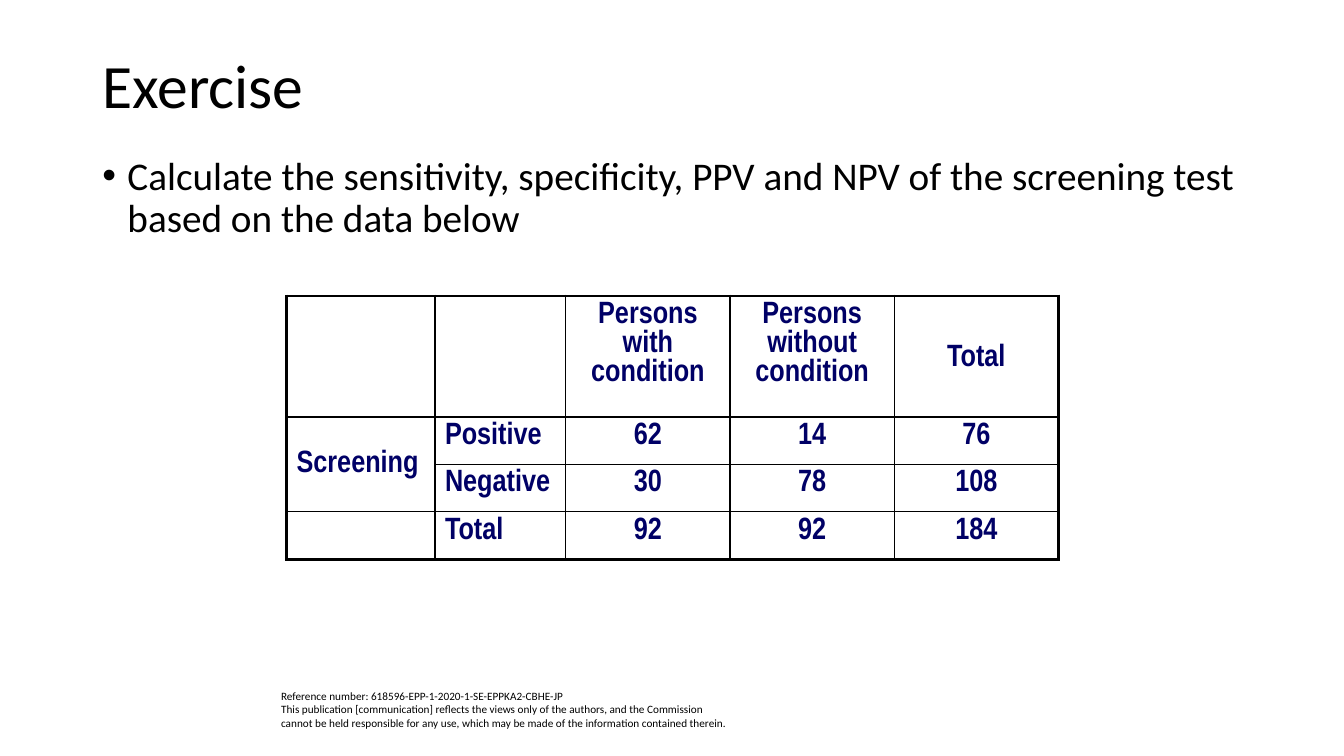
from lxml import etree
from pptx import Presentation
from pptx.dml.color import RGBColor
from pptx.enum.text import MSO_ANCHOR, PP_ALIGN
from pptx.oxml.ns import qn
from pptx.util import Pt

TOP, MIDDLE = MSO_ANCHOR.TOP, MSO_ANCHOR.MIDDLE
LEFT, CENTER = PP_ALIGN.LEFT, PP_ALIGN.CENTER

BLACK, NAVY = "000000", "000066"
THIN, THICK = 1, 2.25

COLUMN_WIDTHS = [106, 93.5, 117.3, 117.3, 117.3]
ROW_HEIGHTS = [69.3, 33.9, 33.9, 33.9]
SCREENING_DATA = [
    ["", "", "Persons with condition", "Persons without condition", "Total"],
    ["Screening", "Positive", "62", "14", "76"],
    ["", "Negative", "30", "78", "108"],
    ["", "Total", "92", "92", "184"],
]


def color(hex_string):
    return RGBColor.from_string(hex_string)


def style_font(paragraph, name, size, hex_string, bold=False):
    font = paragraph.font
    font.name, font.size, font.bold = name, Pt(size), bold
    font.color.rgb = color(hex_string)


def add_text(slide, box, text, size, anchor=TOP, line_spacing=1.0, bullet_indent=0):
    shape = slide.shapes.add_textbox(*[Pt(length) for length in box])
    frame = shape.text_frame
    frame.word_wrap = True
    frame.vertical_anchor = anchor
    paragraph = frame.paragraphs[0]
    paragraph.text = text
    paragraph.line_spacing = line_spacing
    if bullet_indent:
        properties = paragraph._p.get_or_add_pPr()
        properties.set("marL", str(Pt(bullet_indent)))
        properties.set("indent", str(-Pt(bullet_indent)))
        etree.SubElement(properties, qn("a:buFont"), typeface="Arial")
        etree.SubElement(properties, qn("a:buChar"), char="•")
    style_font(paragraph, "Calibri", size, BLACK)


def set_borders(cell, widths):
    """Draw the left, right, top and bottom borders, in that order."""
    properties = cell._tc.get_or_add_tcPr()
    for side, width in zip("LRTB", widths):
        line = etree.SubElement(properties, qn(f"a:ln{side}"), w=str(Pt(width)))
        fill = etree.SubElement(line, qn("a:solidFill"))
        etree.SubElement(fill, qn("a:srgbClr"), val=BLACK)


def add_screening_table(slide, left, top):
    last_row, last_column = len(ROW_HEIGHTS) - 1, len(COLUMN_WIDTHS) - 1
    table = slide.shapes.add_table(
        last_row + 1, last_column + 1, Pt(left), Pt(top),
        Pt(sum(COLUMN_WIDTHS)), Pt(sum(ROW_HEIGHTS))).table
    table.first_row = table.horz_banding = False
    for column, width in zip(table.columns, COLUMN_WIDTHS):
        column.width = Pt(width)
    for row, height in zip(table.rows, ROW_HEIGHTS):
        row.height = Pt(height)

    for r, values in enumerate(SCREENING_DATA):
        for c, value in enumerate(values):
            cell = table.cell(r, c)
            outer_sides = (c == 0, c == last_column, r == 0, r == last_row)
            set_borders(cell, [THICK if outer else THIN for outer in outer_sides])
            cell.fill.background()
            paragraph = cell.text_frame.paragraphs[0]
            paragraph.text = value
            paragraph.alignment = CENTER if c > 1 else LEFT
            style_font(paragraph, "Arial Narrow", 22, NAVY, bold=True)

    # The row label spans both results; the header total sits lower
    table.cell(1, 0).merge(table.cell(2, 0))
    table.cell(1, 0).vertical_anchor = MIDDLE
    table.cell(0, last_column).margin_top = Pt(34.6)


def build_exercise_slide(presentation):
    slide = presentation.slides.add_slide(presentation.slide_layouts[6])

    # Reference note
    add_text(slide, (193.7, 488.9, 334, 36),
             "Reference number: 618596-EPP-1-2020-1-SE-EPPKA2-CBHE-JP\v"
             "This publication [communication] reflects the views only of the authors, "
             "and the Commission cannot be held responsible for any use, which may be "
             "made of the information contained therein.", 8)

    # Title and task
    add_text(slide, (66, 28.8, 828, 69), "Exercise", 44, MIDDLE, 0.9)
    add_text(slide, (66, 108, 828, 79),
             "Calculate the sensitivity, specificity, PPV and NPV of the screening test "
             "based on the data below", 28, line_spacing=0.9, bullet_indent=18)

    # Data
    add_screening_table(slide, 204.7, 211.4)


def main():
    presentation = Presentation()
    presentation.slide_width, presentation.slide_height = Pt(960), Pt(540)
    build_exercise_slide(presentation)
    presentation.save("out.pptx")


if __name__ == "__main__":
    main()
